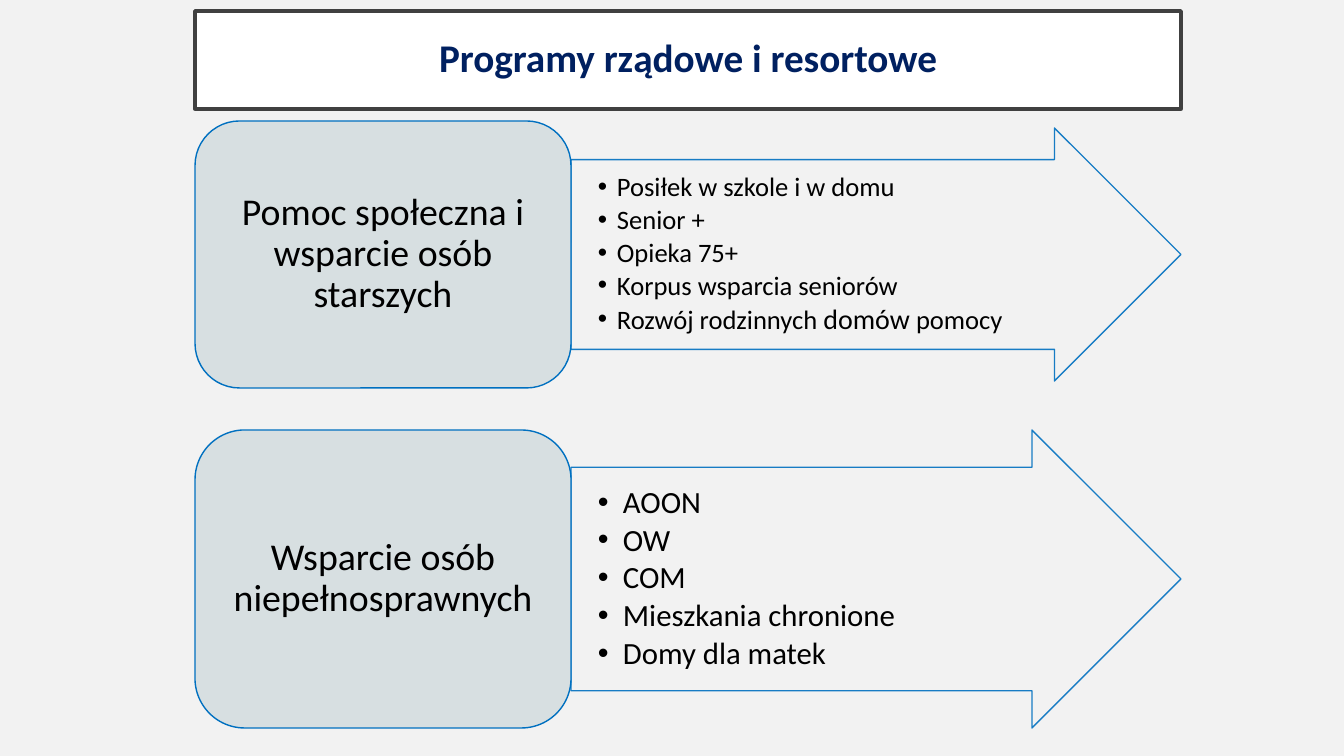
from lxml.etree import SubElement
from pptx import Presentation
from pptx.dml.color import RGBColor
from pptx.enum.shapes import MSO_SHAPE as SHAPE
from pptx.enum.text import MSO_ANCHOR as ANCHOR, MSO_AUTO_SIZE as AUTO, PP_ALIGN as ALIGN
from pptx.oxml.ns import qn
from pptx.util import Emu, Pt

FONT = "Calibri"
BACK, BLUE, BLACK = "F2F2F2", "0070C0", "000000"
LABEL_W = 376


def px(n):
    return Emu(round(n * 9144000 / 1008))


def color(code):
    return RGBColor.from_string(code)


def paint(sp, fill, line, width, alpha=None):
    sp.fill.solid()
    sp.fill.fore_color.rgb = color(fill)
    sp.line.color.rgb = color(line)
    sp.line.width = Pt(width)
    if alpha:
        for clr in sp._element.spPr.iter(qn("a:srgbClr")):
            SubElement(clr, qn("a:alpha"), val=str(alpha * 1000))


def setup_text(sp, inset_x, inset_y):
    tf = sp.text_frame
    tf.word_wrap = True
    tf.auto_size = AUTO.NONE
    tf.vertical_anchor = ANCHOR.MIDDLE
    tf.margin_left = tf.margin_right = px(inset_x)
    tf.margin_top = tf.margin_bottom = px(inset_y)
    return tf


def add_run(p, text, size, code=BLACK, bold=False):
    r = p.add_run()
    r.text = text
    r.font.name = FONT
    r.font.size = Pt(size)
    r.font.bold = bold
    r.font.color.rgb = color(code)


def set_bullet(p, indent):
    pPr = p._p.get_or_add_pPr()
    pPr.set("marL", str(px(indent)))
    pPr.set("indent", str(-px(indent)))
    SubElement(pPr, qn("a:buFont"), typeface="Arial")
    SubElement(pPr, qn("a:buChar"), char="•")


def add_title(s, text, x, y, w, h):
    sp = s.shapes.title
    sp.left, sp.top, sp.width, sp.height = px(x), px(y), px(w), px(h)
    paint(sp, "FFFFFF", "404040", 2.5)
    p = setup_text(sp, 20, 20).paragraphs[0]
    p.alignment = ALIGN.CENTER
    p.line_spacing = 0.9
    add_run(p, text, 28, "002060", True)


def add_program_row(s, label, items, size, indent, x, y, w, h, arrow_gap):
    # Arrow with the list of programmes
    sp = s.shapes.add_shape(SHAPE.RIGHT_ARROW, px(x + LABEL_W), px(y + arrow_gap),
                            px(w - LABEL_W), px(h - 2 * arrow_gap))
    sp.shadow.inherit = False
    sp.adjustments[0], sp.adjustments[1] = 0.75, 0.5
    paint(sp, BACK, BLUE, 1, alpha=90)
    tf = setup_text(sp, 27, 14)
    for i, runs in enumerate(items):
        p = tf.add_paragraph() if i else tf.paragraphs[0]
        p.alignment = ALIGN.LEFT
        p.level = 1
        p.line_spacing = 0.9
        if i:
            p.space_before = Pt(0.15 * size)
        set_bullet(p, indent)
        for text, extra in runs:
            add_run(p, text, size + extra)

    # Rounded label at the arrow's tail
    sp = s.shapes.add_shape(SHAPE.ROUNDED_RECTANGLE, px(x), px(y), px(LABEL_W), px(h))
    sp.shadow.inherit = False
    paint(sp, "D7DFE1", BLUE, 1)
    p = setup_text(sp, 11, 6).paragraphs[0]
    p.alignment = ALIGN.CENTER
    p.line_spacing = 0.9
    add_run(p, label, 27)


def plain(*texts):
    return [[(text, 0)] for text in texts]


def main():
    prs = Presentation()
    prs.slide_width, prs.slide_height = px(1344), px(756)
    s = prs.slides.add_slide(prs.slide_layouts[5])
    s.background.fill.solid()
    s.background.fill.fore_color.rgb = color(BACK)

    x, w = 195, 986
    add_title(s, "Programy rządowe i resortowe", x, 11, w, 98)

    senior_items = plain("Posiłek w szkole i w domu", "Senior +", "Opieka 75+",
                         "Korpus wsparcia seniorów")
    senior_items.append([("Rozwój rodzinnych ", 0), ("domów", 1), (" pomocy", 0)])
    add_program_row(s, "Pomoc społeczna i wsparcie osób starszych", senior_items,
                    19, 19, x, 121, w, 267, 7)

    disability_items = plain("AOON", "OW", "COM", "Mieszkania chronione", "Domy dla matek")
    add_program_row(s, "Wsparcie osób niepełnosprawnych", disability_items,
                    22, 25, x, 430, w, 298, 0)

    prs.save("out.pptx")


if __name__ == "__main__":
    main()
